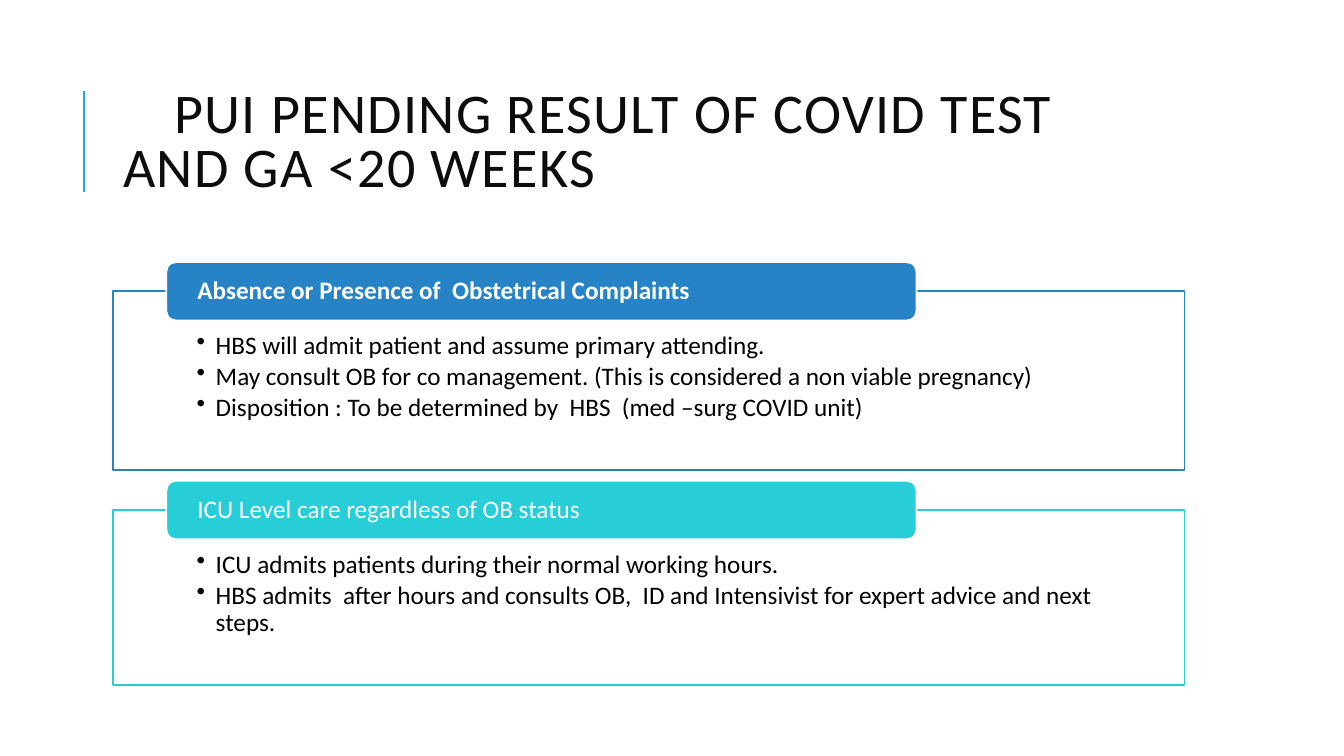
from lxml import etree
from pptx import Presentation, util as u
from pptx.dml.color import RGBColor
from pptx.enum import shapes, text
from pptx.oxml.ns import qn

COLORS = {
    "accent": "1CADE4",
    "blue": "2683C6",
    "teal": "27CED7",
    "white": "FFFFFF",
    "black": "000000",
    "title": "0D0D0D",
}
SECTIONS = [
    ("Absence or Presence of  Obstetrical Complaints", True, "blue", 2.89, 1.77, [
        "HBS will admit patient and assume primary attending.",
        "May consult OB for co management. (This is considered a non viable pregnancy)",
        "Disposition : To be determined by  HBS  (med –surg COVID unit)",
    ]),
    ("ICU Level care regardless of OB status", False, "teal", 5.06, 1.74, [
        "ICU admits patients during their normal working hours.",
        "HBS admits  after hours and consults OB,  ID and Intensivist for expert advice and next steps.",
    ]),
]


class CareSlide:
    font = "Calibri"
    left, width = 1.12, 10.63

    def __init__(self, deck):
        self.slide = deck.slides.add_slide(deck.slide_layouts[5])

    def color(self, name):
        return RGBColor.from_string(COLORS[name])

    def frame(self, shape, insets, anchor):
        frame = shape.text_frame
        frame.word_wrap = True
        frame.auto_size = text.MSO_AUTO_SIZE.NONE
        frame.vertical_anchor = anchor
        (frame.margin_left, frame.margin_top,
         frame.margin_right, frame.margin_bottom) = map(u.Inches, insets)
        return frame

    def style(self, paragraph, size, color, spacing, after=0, bold=False):
        paragraph.alignment = text.PP_ALIGN.LEFT
        paragraph.line_spacing = spacing
        paragraph.space_before = u.Pt(0)
        paragraph.space_after = u.Pt(after)
        font = paragraph.font
        font.name, font.size, font.bold = self.font, u.Pt(size), bold
        font.color.rgb = self.color(color)

    def rule(self, x, top, bottom):
        line = self.slide.shapes.add_connector(
            shapes.MSO_CONNECTOR.STRAIGHT, *map(u.Inches, (x, bottom, x, top)))
        line.line.color.rgb = self.color("accent")
        line.line.width = u.Pt(1.5)
        etree.SubElement(line._element.spPr, qn("a:effectLst"))

    def title(self, wording):
        title = self.slide.shapes.title
        title.left, title.top, title.width, title.height = map(
            u.Inches, (self.left, 0.64, self.width, 1.44))
        frame = self.frame(title, (0.1, 0.19, 0.1, 0.05), text.MSO_ANCHOR.MIDDLE)
        heading = frame.paragraphs[0]
        heading.text = wording
        self.style(heading, 40, "title", 0.8)
        properties = heading._p.get_or_add_pPr()
        properties.set("marL", "0")
        properties.set("indent", str(u.Inches(0.51)))
        properties.find(qn("a:defRPr")).set("spc", "100")

    def box(self, kind, place, fill, line):
        box = self.slide.shapes.add_shape(kind, *map(u.Inches, place))
        box.shadow.inherit = False
        box.fill.solid()
        box.fill.fore_color.rgb = self.color(fill)
        box.line.color.rgb = self.color(line)
        box.line.width = u.Pt(1.25)
        return box

    def bullets(self, frame, points):
        for number, point in enumerate(points):
            bullet = frame.add_paragraph() if number else frame.paragraphs[0]
            bullet.text = point
            self.style(bullet, 18, "black", 0.9, after=2.7)
            properties = bullet._p.get_or_add_pPr()
            properties.set("marL", str(u.Inches(0.19)))
            properties.set("indent", str(u.Inches(-0.19)))
            mark = etree.Element(qn("a:buChar"), char="•")
            properties.find(qn("a:defRPr")).addprevious(mark)

    def section(self, heading, bold, color, top, height, points):
        panel = self.box(shapes.MSO_SHAPE.RECTANGLE,
                         (self.left, top, self.width, height), "white", color)
        self.bullets(self.frame(panel, (0.83, 0.41, 0.83, 0.14),
                                text.MSO_ANCHOR.TOP), points)
        label = self.box(shapes.MSO_SHAPE.ROUNDED_RECTANGLE,
                         (1.65, top - 0.29, 7.44, 0.58), color, "white")
        frame = self.frame(label, (0.28, 0, 0.28, 0), text.MSO_ANCHOR.MIDDLE)
        frame.text = heading
        self.style(frame.paragraphs[0], 18, "white", 0.9, bold=bold)


def main():
    deck = Presentation()
    deck.slide_width, deck.slide_height = u.Inches(13.33), u.Inches(7.5)
    care = CareSlide(deck)
    care.rule(0.83, 0.9, 1.9)
    care.title("PUI PENDING RESULT OF COVID TEST AND GA <20 WEEKS")
    for section in SECTIONS:
        care.section(*section)
    deck.save("out.pptx")


if __name__ == "__main__":
    main()
